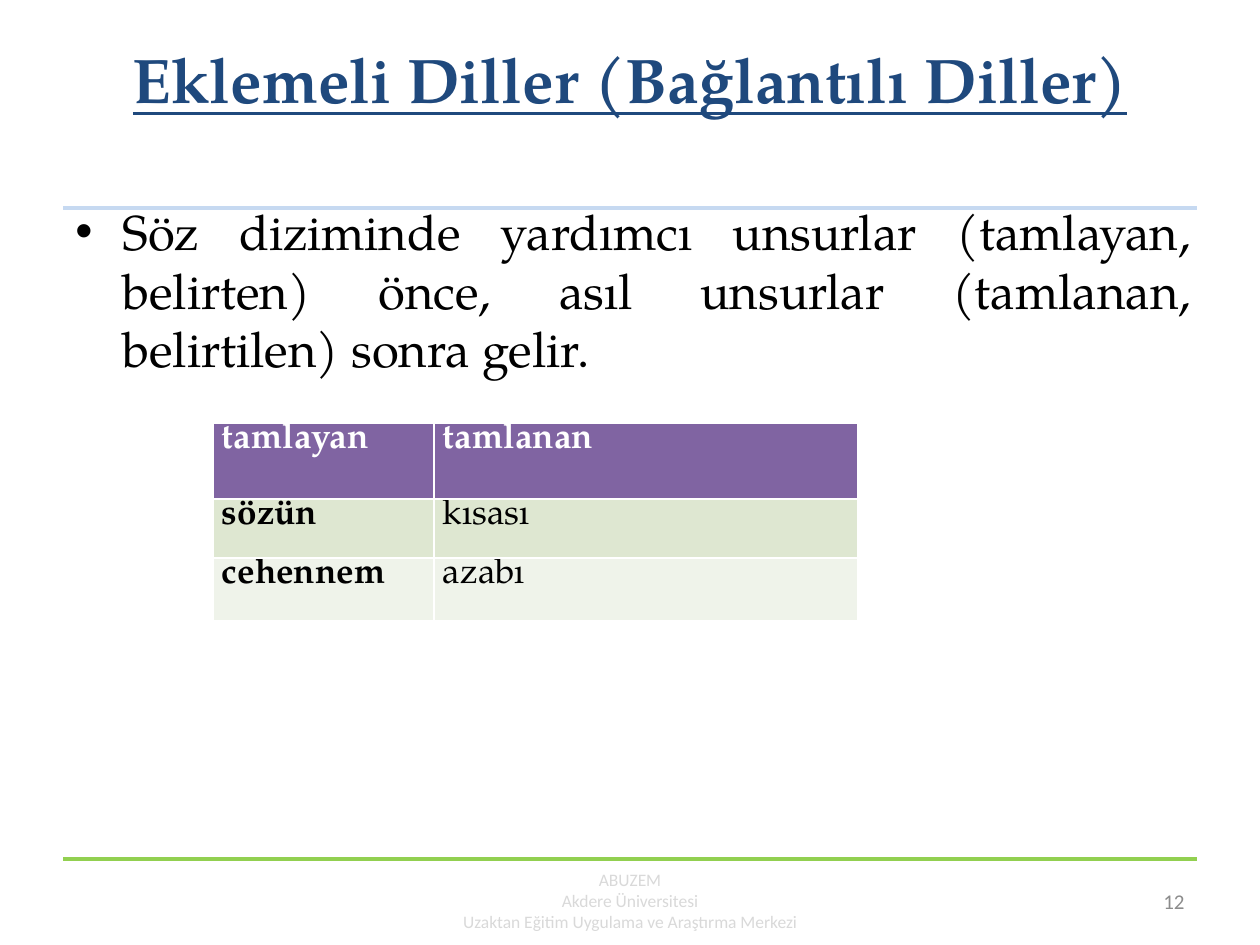
import pptx
import pptx.util
import pptx.dml.color
import pptx.enum.text
import pptx.enum.shapes
import lxml.etree

SCALE = 914400 / 126
SERIF = "TeX Gyre Pagella"
SANS = "Calibri"
ALIGN = pptx.enum.text.PP_ALIGN
ANCHOR = pptx.enum.text.MSO_ANCHOR


def px(num):
    return pptx.util.Emu(round(num * SCALE))


def color(code):
    return pptx.dml.color.RGBColor.from_string(code)


class Deck:
    """Holds the style and the current slide."""

    def __init__(self, wide, high):
        self.file = pptx.Presentation()
        self.file.slide_width, self.file.slide_height = px(wide), px(high)
        self.slide = self.file.slides.add_slide(self.file.slide_layouts[5])

    def style(self, para, size, code, font=SERIF, bold=False, line=False, align=ALIGN.JUSTIFY):
        para.alignment = align
        for run in para.runs:
            run.font.name, run.font.size = font, pptx.util.Pt(size)
            run.font.bold, run.font.underline = bold, line
            run.font.color.rgb = color(code)

    def title(self, text, box, size, code):
        shape = self.slide.shapes.title
        shape.left, shape.top, shape.width, shape.height = map(px, box)
        frame = shape.text_frame
        frame.text = text
        frame.vertical_anchor = ANCHOR.TOP
        frame.margin_top = px(3)
        self.style(frame.paragraphs[0], size, code, bold=True, line=True, align=ALIGN.CENTER)

    def text(self, text, box, size, code, font, align, anchor=ANCHOR.MIDDLE):
        frame = self.slide.shapes.add_textbox(*map(px, box)).text_frame
        frame.word_wrap = True
        frame.vertical_anchor = anchor
        frame.text = text
        for para in frame.paragraphs:
            self.style(para, size, code, font, align=align)
        return frame

    def bullet(self, text, box, size, code, indent):
        frame = self.text(text, box, size, code, SERIF, ALIGN.JUSTIFY, ANCHOR.TOP)
        para = frame.paragraphs[0]
        props = para._p.get_or_add_pPr()
        props.set("marL", str(px(indent)))
        props.set("indent", str(-px(indent)))
        space = "{http://schemas.openxmlformats.org/drawingml/2006/main}"
        lxml.etree.SubElement(props, space + "buFont", typeface="Arial")
        lxml.etree.SubElement(props, space + "buChar", char="•")

    def rule(self, left, top, wide, code):
        line = self.slide.shapes.add_connector(
            pptx.enum.shapes.MSO_CONNECTOR.STRAIGHT,
            px(left), px(top), px(left + wide), px(top))
        line.line.color.rgb = color(code)
        line.line.width = pptx.util.Pt(2)
        props = line._element.spPr
        props.append(props.makeelement(
            "{http://schemas.openxmlformats.org/drawingml/2006/main}effectLst", {}))

    def table(self, rows, left, top, cols, highs, fills, size):
        grid = self.slide.shapes.add_table(
            len(rows), len(cols), px(left), px(top), px(sum(cols)), px(sum(highs))).table
        for col, wide in zip(grid.columns, cols):
            col.width = px(wide)
        for r, (row, high, fill) in enumerate(zip(rows, highs, fills)):
            grid.rows[r].height = px(high)
            for c, word in enumerate(row):
                cell = grid.cell(r, c)
                cell.fill.solid()
                cell.fill.fore_color.rgb = color(fill)
                cell.margin_left = cell.margin_right = px(9)
                cell.margin_top = cell.margin_bottom = 0
                cell.text = word
                para = cell.text_frame.paragraphs[0]
                self.style(para, size, "000000" if r else "FFFFFF", bold=r == 0 or c == 0)


def main():
    deck = Deck(1260, 945)
    for top, code in ((208, "C6D9F1"), (859, "92D050")):
        deck.rule(63, top, 1134, code)
    deck.title("Eklemeli Diller (Bağlantılı Diller)", (63, 38, 1134, 157), 36, "1F497D")
    deck.bullet("Söz diziminde yardımcı unsurlar (tamlayan, belirten) önce, "
                "asıl unsurlar (tamlanan, belirtilen) sonra gelir.",
                (63, 195, 1140, 634), 28, "000000", 47)
    deck.table((("tamlayan", "tamlanan"), ("sözün", "kısası"), ("cehennem", "azabı")),
               213, 423, (221, 424), (76, 59, 63), ("8064A2", "DEE7D1", "EFF3EA"), 20)
    deck.text("ABUZEM\nAkdere Üniversitesi\nUzaktan Eğitim Uygulama ve Araştırma Merkezi",
              (362, 876, 536, 50), 10, "D9D9D9", SANS, ALIGN.CENTER)
    deck.text("12", (903, 876, 294, 50), 12, "8C8C8C", SANS, ALIGN.RIGHT)
    deck.file.save("out.pptx")


if __name__ == "__main__":
    main()
